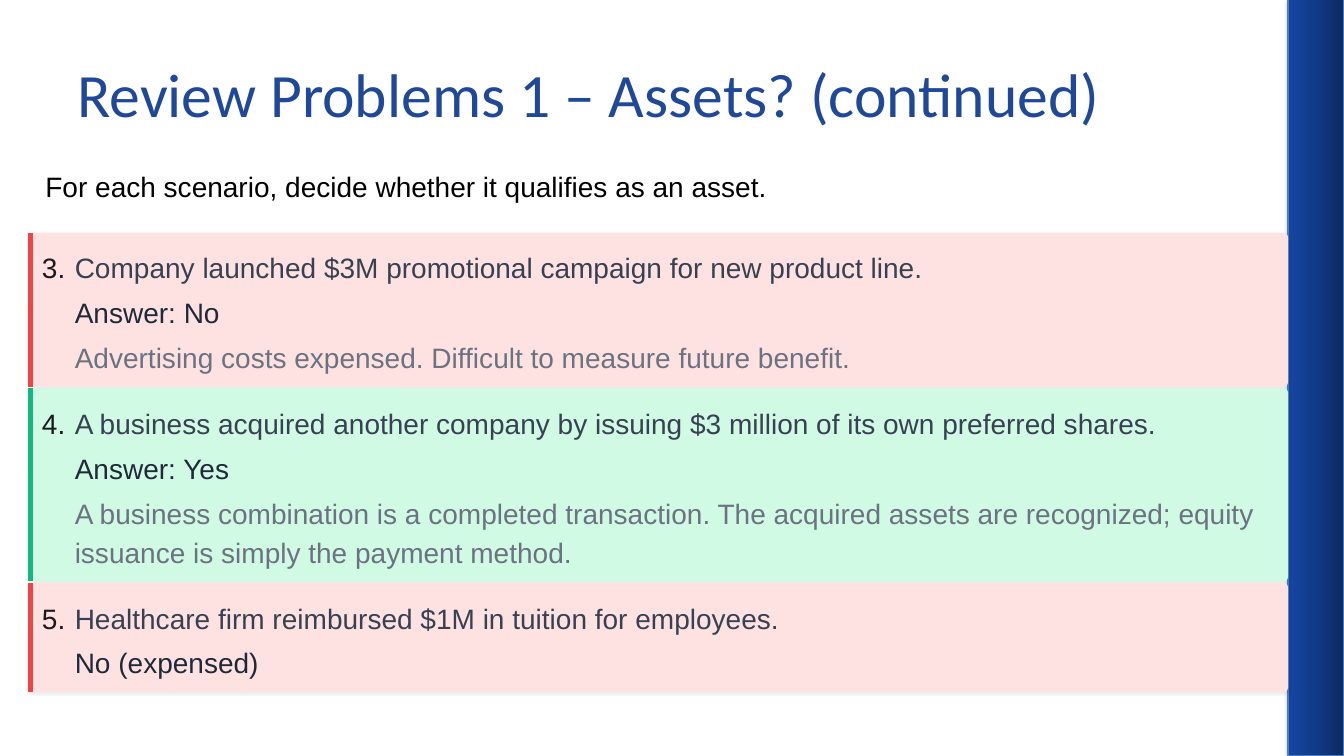
from dataclasses import dataclass

from lxml.etree import SubElement
from pptx import Presentation
from pptx.dml.color import RGBColor
from pptx.enum.shapes import MSO_CONNECTOR, MSO_SHAPE
from pptx.enum.text import MSO_ANCHOR, PP_ALIGN
from pptx.oxml import parse_xml
from pptx.oxml.ns import nsdecls, qn
from pptx.util import Inches, Pt


@dataclass(frozen=True)
class Theme:
    title_font: str = "Calibri"
    body_font: str = "Arial"
    title_size: float = 44
    body_size: float = 20
    line_pitch: float = 28
    paragraph_gap: float = 4
    accent_width: float = 3.75
    title: str = "1F4899"
    intro: str = "000000"
    number: str = "1A1A1A"
    scenario: str = "374151"
    answer: str = "1F2937"
    reason: str = "6B7280"
    yes: tuple = ("D1FAE5", "10B981")
    no: tuple = ("FEE2E2", "EF4444")
    sidebar_line: str = "4B7EBC"
    sidebar_stops: tuple = ((0, "0D2960"), (50, "123A89"), (100, "1645A2"))


THEME = Theme()
SLIDE_WIDTH, SLIDE_HEIGHT = Inches(13.333), Inches(7.5)
COLUMN = SLIDE_WIDTH / 48
ROW = Pt(THEME.line_pitch)  # one line of body text

CARD_LEFT, CARD_WIDTH = 1, 45
NUMBER_LEFT, NUMBER_WIDTH = 1.5, 0.87
TEXT_LEFT, TEXT_WIDTH = 2.67, 43.96
CARDS_TOP = 5.94
CARD_PADDING, CARD_GAP, CARD_RADIUS = 0.32, 0.04, 0.11
ENTRY_GAP = THEME.paragraph_gap / THEME.line_pitch

# Number, verdict colours, then (text, colour, lines) for each entry
PROBLEMS = [
    ("3.", THEME.no, [
        ("Company launched $3M promotional campaign for new product line.", THEME.scenario, 1),
        ("Answer: No", THEME.answer, 1),
        ("Advertising costs expensed. Difficult to measure future benefit.", THEME.reason, 1),
    ]),
    ("4.", THEME.yes, [
        ("A business acquired another company by issuing $3 million of its own "
         "preferred shares.", THEME.scenario, 1),
        ("Answer: Yes", THEME.answer, 1),
        ("A business combination is a completed transaction. The acquired assets are "
         "recognized; equity issuance is simply the payment method.", THEME.reason, 2),
    ]),
    ("5.", THEME.no, [
        ("Healthcare firm reimbursed $1M in tuition for employees.", THEME.scenario, 1),
        ("No (expensed)", THEME.answer, 1),
    ]),
]


def rgb(code):
    return RGBColor.from_string(code)


def grid(left, top, width, height):
    """Turn columns and rows into slide lengths."""
    return round(left * COLUMN), round(top * ROW), round(width * COLUMN), round(height * ROW)


def style_font(paragraph, name, size, color):
    paragraph.font.name = name
    paragraph.font.size = Pt(size)
    paragraph.font.color.rgb = rgb(color)


def add_shadow(shape, opacity, blur, distance):
    """Cast a black shadow straight down; blur and distance are in points."""
    shape.shadow.inherit = False
    effects = shape._element.spPr.find(qn("a:effectLst"))
    shadow = SubElement(effects, qn("a:outerShdw"), blurRad=str(Pt(blur)),
                        dist=str(Pt(distance)), dir="5400000", rotWithShape="0")
    black = SubElement(shadow, qn("a:srgbClr"), val="000000")
    SubElement(black, qn("a:alpha"), val=str(opacity * 1000))


def add_sidebar(slide):
    left = CARD_LEFT + CARD_WIDTH
    sidebar = slide.shapes.add_shape(
        MSO_SHAPE.RECTANGLE, *grid(left, 0, 48 - left, SLIDE_HEIGHT / ROW))
    sidebar.line.color.rgb = rgb(THEME.sidebar_line)
    sidebar.line.width = Pt(0.75)
    stops = "".join(f'<a:gs pos="{position * 1000}"><a:srgbClr val="{color}"/></a:gs>'
                    for position, color in THEME.sidebar_stops)
    gradient = parse_xml(f'<a:gradFill {nsdecls("a")} rotWithShape="1"><a:gsLst>{stops}</a:gsLst>'
                         '<a:lin ang="10800000" scaled="0"/></a:gradFill>')
    sidebar._element.spPr.find(qn("a:prstGeom")).addnext(gradient)
    add_shadow(sidebar, 35, 3.1, 1.8)


def set_title(slide, text):
    title = slide.shapes.title
    title.left, title.top, title.width, title.height = grid(2.4, 0.77, 43.2, 3.21)
    title.text_frame.text = text
    title.text_frame.vertical_anchor = MSO_ANCHOR.MIDDLE
    heading = title.text_frame.paragraphs[0]
    heading.alignment = PP_ALIGN.LEFT
    style_font(heading, THEME.title_font, THEME.title_size, THEME.title)


def add_text(slide, text, color, left, top, width, lines=1):
    frame = slide.shapes.add_textbox(*grid(left, top, width, lines)).text_frame
    frame.margin_left = frame.margin_top = frame.margin_right = frame.margin_bottom = 0
    frame.word_wrap = True
    frame.text = text
    paragraph = frame.paragraphs[0]
    paragraph.line_spacing = Pt(THEME.line_pitch)
    paragraph.space_after = Pt(THEME.paragraph_gap)
    style_font(paragraph, THEME.body_font, THEME.body_size, color)


def add_panel(slide, top, height, fill, accent):
    """Draw a card's rounded background and the accent along its left edge."""
    panel = slide.shapes.add_shape(
        MSO_SHAPE.ROUNDED_RECTANGLE, *grid(CARD_LEFT, top, CARD_WIDTH, height))
    panel.adjustments[0] = CARD_RADIUS / height
    panel.fill.solid()
    panel.fill.fore_color.rgb = rgb(fill)
    panel.line.fill.background()
    add_shadow(panel, 8, 1.5, 0.8)

    accent_x = panel.left + Pt(THEME.accent_width / 2)
    edge = slide.shapes.add_connector(
        MSO_CONNECTOR.STRAIGHT, accent_x, panel.top, accent_x, panel.top + panel.height)
    edge.line.color.rgb = rgb(accent)
    edge.line.width = Pt(THEME.accent_width)
    SubElement(edge._element.spPr, qn("a:effectLst"))


def add_problem(slide, top, number, verdict, entries):
    """Draw one problem card and return the row where it ends."""
    height = (2 * CARD_PADDING + sum(lines for _, _, lines in entries)
              + ENTRY_GAP * (len(entries) - 1))
    add_panel(slide, top, height, *verdict)
    entry_top = top + CARD_PADDING
    add_text(slide, number, THEME.number, NUMBER_LEFT, entry_top, NUMBER_WIDTH)
    for text, color, lines in entries:
        add_text(slide, text, color, TEXT_LEFT, entry_top, TEXT_WIDTH, lines)
        entry_top += lines + ENTRY_GAP
    return top + height


def main():
    presentation = Presentation()
    presentation.slide_width, presentation.slide_height = SLIDE_WIDTH, SLIDE_HEIGHT
    slide = presentation.slides.add_slide(presentation.slide_layouts.get_by_name("Title Only"))
    add_sidebar(slide)
    set_title(slide, "Review Problems 1 – Assets? (continued)")
    add_text(slide, "For each scenario, decide whether it qualifies as an asset.",
             THEME.intro, 1.62, 4.19, 36.72)
    card_top = CARDS_TOP
    for number, verdict, entries in PROBLEMS:
        card_top = add_problem(slide, card_top, number, verdict, entries) + CARD_GAP
    presentation.save("out.pptx")


if __name__ == "__main__":
    main()
